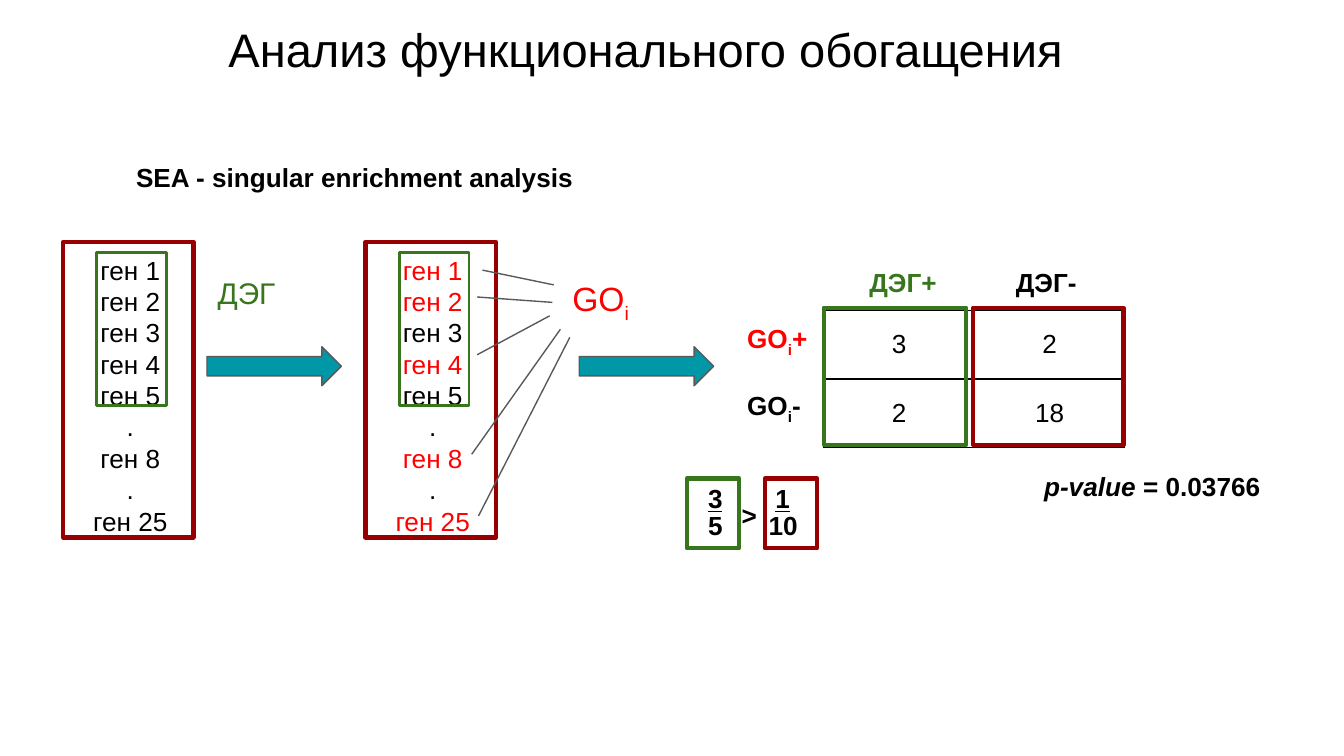
from dataclasses import dataclass

from lxml import etree
from pptx import Presentation
from pptx import util as u
from pptx.dml.color import RGBColor
from pptx.enum import shapes, text
from pptx.oxml import ns


@dataclass(frozen=True)
class Theme:
    font: str = "Arial"
    black: str = "000000"
    red: str = "FF0000"
    dark_red: str = "980000"
    green: str = "38761D"
    grey: str = "595959"
    teal: str = "0097A7"
    title: float = 25.2
    large: int = 18
    label: int = 16
    body: int = 14
    thin: float = 0.75
    medium: float = 1.5
    thick: float = 2.25


THEME = Theme()
SLIDE_WIDTH = 10
SLIDE_HEIGHT = SLIDE_WIDTH * 9 / 16
GENES = ["ген 1", "ген 2", "ген 3", "ген 4", "ген 5", ".", "ген 8", ".", "ген 25"]
GO_GENES = {"ген 1", "ген 2", "ген 4", "ген 8", "ген 25"}


def color(value):
    return RGBColor.from_string(value)


def inches(*lengths):
    return [u.Inches(length) for length in lengths]


def style(paragraph, size, tint, bold=False, align=text.PP_ALIGN.LEFT):
    paragraph.alignment = align
    font = paragraph.font
    font.name, font.size, font.bold = THEME.font, u.Pt(size), bold
    font.color.rgb = color(tint)


def set_margins(target):
    """Give a text frame or a table cell equal insets."""
    target.margin_left = target.margin_right = u.Inches(0.1)
    target.margin_top = target.margin_bottom = u.Inches(0.1)


def add_text(slide, box, lines, size=THEME.body, tint=THEME.black, bold=False,
             align=text.PP_ALIGN.LEFT):
    """Add a text box, one paragraph per line, and return its paragraphs."""
    frame = slide.shapes.add_textbox(*inches(*box)).text_frame
    frame.word_wrap = True
    set_margins(frame)
    frame.text = "\n".join(lines)
    for paragraph in frame.paragraphs:
        style(paragraph, size, tint, bold, align)
    return frame.paragraphs


def add_go_label(slide, box, sign="", **options):
    """Write GO with a subscript i and an optional sign."""
    paragraph = add_text(slide, box, ["GO"], **options)[0]
    subscript = paragraph.add_run()
    subscript.text = "i"
    subscript._r.get_or_add_rPr().set("baseline", "-25000")
    if sign:
        paragraph.add_run().text = sign


def add_shape(slide, kind, box, line, width, fill=None):
    shape = slide.shapes.add_shape(kind, *inches(*box))
    shape.shadow.inherit = False
    if fill:
        shape.fill.solid()
        shape.fill.fore_color.rgb = color(fill)
    else:
        shape.fill.background()
    shape.line.color.rgb = color(line)
    shape.line.width = u.Pt(width)


def add_frame(slide, box, tint, width=THEME.thick):
    add_shape(slide, shapes.MSO_SHAPE.RECTANGLE, box, tint, width)


def add_arrow(slide, left, top):
    add_shape(slide, shapes.MSO_SHAPE.RIGHT_ARROW, (left, top, 1, 0.29),
              THEME.grey, THEME.thin, THEME.teal)


def add_line(slide, start, end):
    line = slide.shapes.add_connector(shapes.MSO_CONNECTOR.STRAIGHT, *inches(*start, *end))
    line.line.color.rgb = color(THEME.grey)
    line.line.width = u.Pt(THEME.thin)
    etree.SubElement(line._element.spPr, ns.qn("a:effectLst"))


def add_cell_borders(cell):
    properties = cell._tc.get_or_add_tcPr()
    for position, side in enumerate(("lnL", "lnR", "lnT", "lnB")):
        line = etree.Element(ns.qn(f"a:{side}"), w=str(u.Pt(THEME.thin)))
        fill = etree.SubElement(line, ns.qn("a:solidFill"))
        etree.SubElement(fill, ns.qn("a:srgbClr"), val=THEME.black)
        properties.insert(position, line)


def add_title(slide, box):
    title = slide.shapes.title
    title.left, title.top, title.width, title.height = inches(*box)
    frame = title.text_frame
    set_margins(frame)
    frame.text = "Анализ функционального обогащения"
    frame.auto_size = text.MSO_AUTO_SIZE.NONE
    frame.vertical_anchor = text.MSO_ANCHOR.MIDDLE
    style(frame.paragraphs[0], THEME.title, THEME.black)


def add_gene_list(slide, box, highlighted=()):
    """All genes in a dark red frame, the first five in a green one."""
    left, top, width, height = box
    paragraphs = add_text(slide, (left + 0.02, top - 0.01, 0.96, 1.46), GENES,
                          align=text.PP_ALIGN.CENTER)
    for gene, paragraph in zip(GENES, paragraphs):
        if gene in highlighted:
            paragraph.font.color.rgb = color(THEME.red)
    add_frame(slide, (left + 0.25, top + 0.08, 0.52, 1.14), THEME.green, THEME.medium)
    add_frame(slide, box, THEME.dark_red)


def add_go_links(slide, box):
    """Lines from the annotated genes to the GO term."""
    left, top, width, height = box
    links = [((0.08, 0.04), (0.61, 0.15)), ((0.04, 0.24), (0.6, 0.28)),
             ((0.04, 0.67), (0.58, 0.38)), ((0, 1.41), (0.66, 0.48)),
             ((0.05, 1.87), (0.73, 0.54))]
    for start, end in links:
        add_line(slide, (left + start[0], top + start[1]), (left + end[0], top + end[1]))
    add_go_label(slide, (left + 0.65, top, 0.66, 0.52), size=THEME.large, tint=THEME.red)


def add_contingency_table(slide, box):
    left, top, width, height = box
    values = [[3, 2], [2, 18]]
    table = slide.shapes.add_table(2, 2, *inches(*box)).table
    table.first_row = table.horz_banding = False
    for row, numbers in enumerate(values):
        for column, number in enumerate(numbers):
            cell = table.cell(row, column)
            cell.text = str(number)
            cell.fill.background()
            cell.vertical_anchor = text.MSO_ANCHOR.MIDDLE
            set_margins(cell)
            style(cell.text_frame.paragraphs[0], THEME.body, THEME.black,
                  align=text.PP_ALIGN.CENTER)
            add_cell_borders(cell)
    # Headings
    for offset, heading, tint in ((0.24, "ДЭГ+", THEME.green), (1.33, "ДЭГ-", THEME.black)):
        add_text(slide, (left + offset, top - 0.43, 0.78, 0.52), [heading], tint=tint, bold=True)
    for offset, sign, tint in ((-0.01, "+", THEME.red), (0.49, "-", THEME.black)):
        add_go_label(slide, (left - 0.67, top + offset, 0.78, 0.52), sign, tint=tint, bold=True)
    # Column frames
    add_frame(slide, (left + 1.11, top - 0.02, 1.12, height), THEME.dark_red)
    add_frame(slide, (left, top - 0.02, 1.06, height), THEME.green)


def add_fraction(slide, box, numerator, denominator, offsets, tint):
    left, top, width, height = box
    above = add_text(slide, (left + offsets[0], top - 0.07, 0.29, 0.46), [numerator], bold=True)
    above[0].font.underline = True
    add_text(slide, (left + offsets[1], top + 0.13, 0.3 * len(denominator), 0.46),
             [denominator], bold=True)
    add_frame(slide, box, tint)


def add_comparison(slide, box):
    """Share of GO genes inside and outside the selected set."""
    left, top, width, height = box
    add_fraction(slide, (left, top, 0.39, height), "3", "5", (0.06, 0.06), THEME.green)
    add_fraction(slide, (left + width - 0.39, top, 0.39, height), "1", "10",
                 (-0.02, -0.07), THEME.dark_red)
    sign = add_text(slide, (left + 0.31, top + 0.02, 0.31, 0.39), [">"], bold=True)
    sign[0].line_spacing = 1.15


def add_p_value(slide, box):
    paragraph = add_text(slide, box, ["p-value"], bold=True)[0]
    paragraph.runs[0].font.italic = True
    paragraph.add_run().text = " = 0.03766"


def main():
    presentation = Presentation()
    presentation.slide_width, presentation.slide_height = inches(SLIDE_WIDTH, SLIDE_HEIGHT)
    slide = presentation.slides.add_slide(presentation.slide_layouts[5])
    # Headings
    add_title(slide, (1.6, 0.05, 6.58, 0.63))
    add_text(slide, (0.86, 1.1, 3.56, 0.44), ["SEA - singular enrichment analysis"],
             bold=True, align=text.PP_ALIGN.CENTER)
    # Gene lists and GO term
    add_gene_list(slide, (0.47, 1.8, 0.97, 2.2))
    add_text(slide, (1.52, 1.94, 0.63, 0.52), ["ДЭГ"], size=THEME.label, tint=THEME.green,
             align=text.PP_ALIGN.CENTER)
    add_gene_list(slide, (2.72, 1.8, 0.97, 2.2), GO_GENES)
    add_go_links(slide, (3.51, 1.97, 1.31, 1.87))
    for left in (1.54, 4.31):
        add_arrow(slide, left, 2.58)
    # Statistics
    add_contingency_table(slide, (6.13, 2.31, 2.24, 1.02))
    add_comparison(slide, (5.11, 3.56, 0.97, 0.52))
    add_p_value(slide, (7.67, 3.4, 2.15, 0.52))
    presentation.save("out.pptx")


if __name__ == "__main__":
    main()
